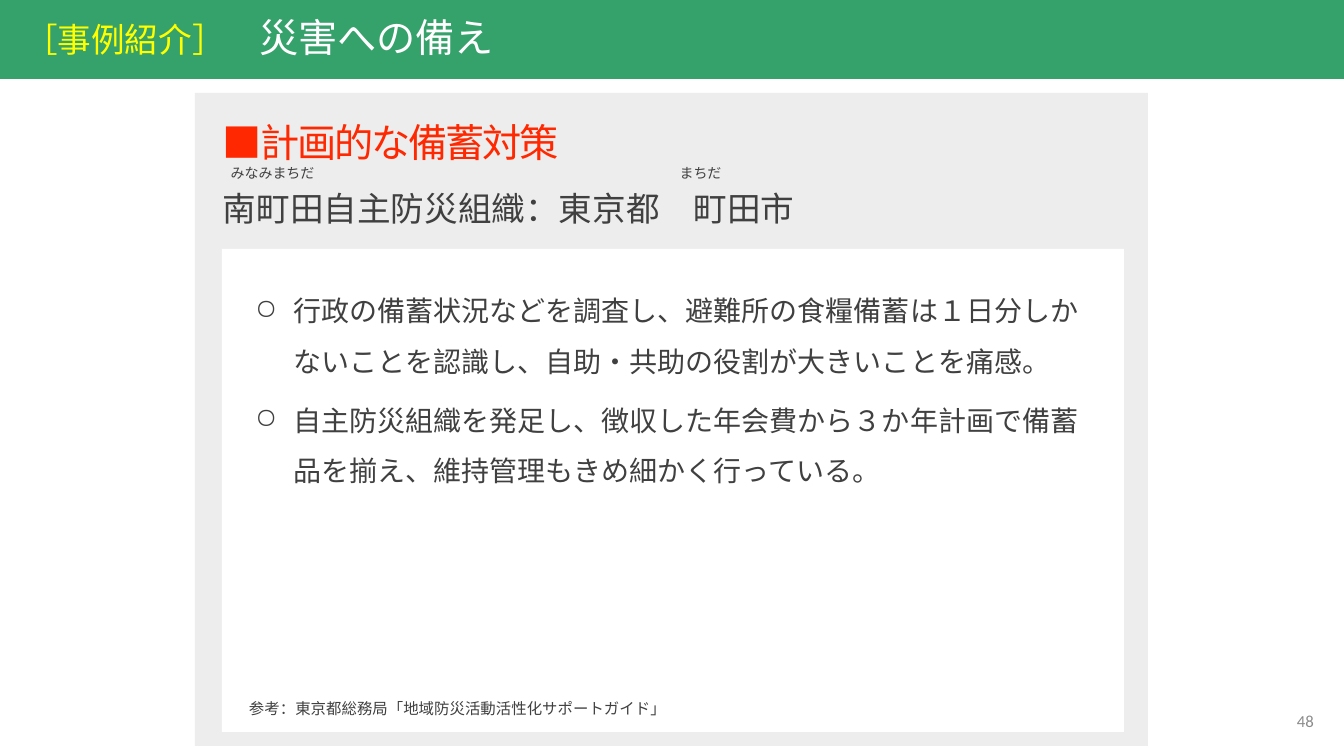
"""Builds the disaster stockpile case slide."""
from lxml import etree
from pptx import Presentation
from pptx.dml.color import RGBColor
from pptx.enum.shapes import MSO_SHAPE
from pptx.enum.text import MSO_ANCHOR, PP_ALIGN
from pptx.oxml.ns import qn
from pptx.util import Pt

RECT = MSO_SHAPE.RECTANGLE
TOP, MID = MSO_ANCHOR.TOP, MSO_ANCHOR.MIDDLE
LEFT, CENTER, RIGHT = PP_ALIGN.LEFT, PP_ALIGN.CENTER, PP_ALIGN.RIGHT
SCALE = 914400 / 100.8
JP, NUM = "Noto Sans CJK JP", "Calibri"
INK, RED, GREEN, GREY = "404040", "FF2800", "35A16B", "EDEDED"
WHITE, YELLOW, PALE = "FFFFFF", "FFFF00", "8C8C8C"
HANG = 38

BULLET = {"line_spacing": 1.5, "space_after": Pt(6)}
HEAD = {"line_spacing": 1.2}
NAME = {"line_spacing": 1.2, "space_before": Pt(10)}
RUBY = {"alignment": CENTER}

# Each paragraph: format, bullet mark, runs of (text, size, colour, spacing)
TITLE = [({"line_spacing": 0.9}, "", [("［事例紹介］\u3000".replace("\u3000", "　"), 24, YELLOW, 0),
                                       ("災害への備え", 28, WHITE, 0)])]
CASE = [
    (HEAD, "", [("■計画的な備蓄対策", 28, RED, -150)]),
    (NAME, "", [("南町田自主防災組織：東京都　町田市", 24, INK, 0)]),
]
POINTS = [(BULLET, "○", [(text, 20, INK, 0)]) for text in (
    "行政の備蓄状況などを調査し、避難所の食糧備蓄は１日分しかないことを認識し、自助・共助の役割が大きいことを痛感。",
    "自主防災組織を発足し、徴収した年会費から３か年計画で備蓄品を揃え、維持管理もきめ細かく行っている。",
)]
SOURCE = [({}, "", [("参考：東京都総務局「地域防災活動活性化サポートガイド」", 11, INK, 0)])]
CITY = [(RUBY, "", [("まちだ", 10, INK, 0)])]
TOWN = [(RUBY, "", [("みなみまちだ", 10, INK, 0)])]
PAGE = [({"alignment": RIGHT}, "", [("48", 12, PALE, 0)])]

PAD = (10, 5, 10, 5)
# Each part: box, fill, padding, anchor, font, paragraphs
PARTS = [
    ((0, 0, 1344, 79), GREEN, (24, 0, 24, 0), MID, JP, TITLE),
    ((195, 93, 953, 653), GREY, (28, 16, 10, 5), TOP, JP, CASE),
    ((222, 249, 902, 483), WHITE, PAD, TOP, JP, []),
    ((245, 269, 850, 179), None, (10, 8, 10, 5), TOP, JP, POINTS),
    ((239, 694, 672, 29), None, PAD, TOP, JP, SOURCE),
    ((645, 160, 111, 27), None, PAD, TOP, JP, CITY),
    ((217, 160, 111, 27), None, PAD, TOP, JP, TOWN),
    ((1022, 701, 302, 40), None, PAD, MID, NUM, PAGE),
]


def px(n):
    return round(n * SCALE)


def color(code):
    return RGBColor.from_string(code)


def style(item, values):
    for key, value in values.items():
        setattr(item, key, value)


def add_run(para, face, text, size, code, gap):
    run = para.add_run()
    run.text = text
    style(run.font, {"size": Pt(size), "name": face})
    run.font.color.rgb = color(code)
    props = run.font._element
    etree.SubElement(props, qn("a:ea")).set("typeface", face)
    if gap:
        props.set("spc", str(gap))


def add_text(frame, face, paras):
    for i, (look, mark, runs) in enumerate(paras):
        para = frame.add_paragraph() if i else frame.paragraphs[0]
        if mark:
            props = para._p.get_or_add_pPr()
            props.set("marL", str(px(HANG)))
            props.set("indent", str(-px(HANG)))
            etree.SubElement(props, qn("a:buChar")).set("char", mark)
        style(para, {"alignment": LEFT, **look})
        for run in runs:
            add_run(para, face, *run)


def add_part(shapes, box, fill, pad, anchor, face, paras):
    place = [px(n) for n in box]
    if fill:
        shape = shapes.add_shape(RECT, *place)
        shape.shadow.inherit = False
        shape.fill.solid()
        shape.fill.fore_color.rgb = color(fill)
        shape.line.fill.background()
    else:
        shape = shapes.add_textbox(*place)
    frame = shape.text_frame
    sides = ("margin_left", "margin_top", "margin_right", "margin_bottom")
    style(frame, dict(zip(sides, map(px, pad))))
    style(frame, {"word_wrap": True, "vertical_anchor": anchor})
    add_text(frame, face, paras)


def main():
    deck = Presentation()
    style(deck, {"slide_width": px(1344), "slide_height": px(756)})
    slide = deck.slides.add_slide(deck.slide_layouts[6])
    for part in PARTS:
        add_part(slide.shapes, *part)
    deck.save("out.pptx")


if __name__ == "__main__":
    main()
